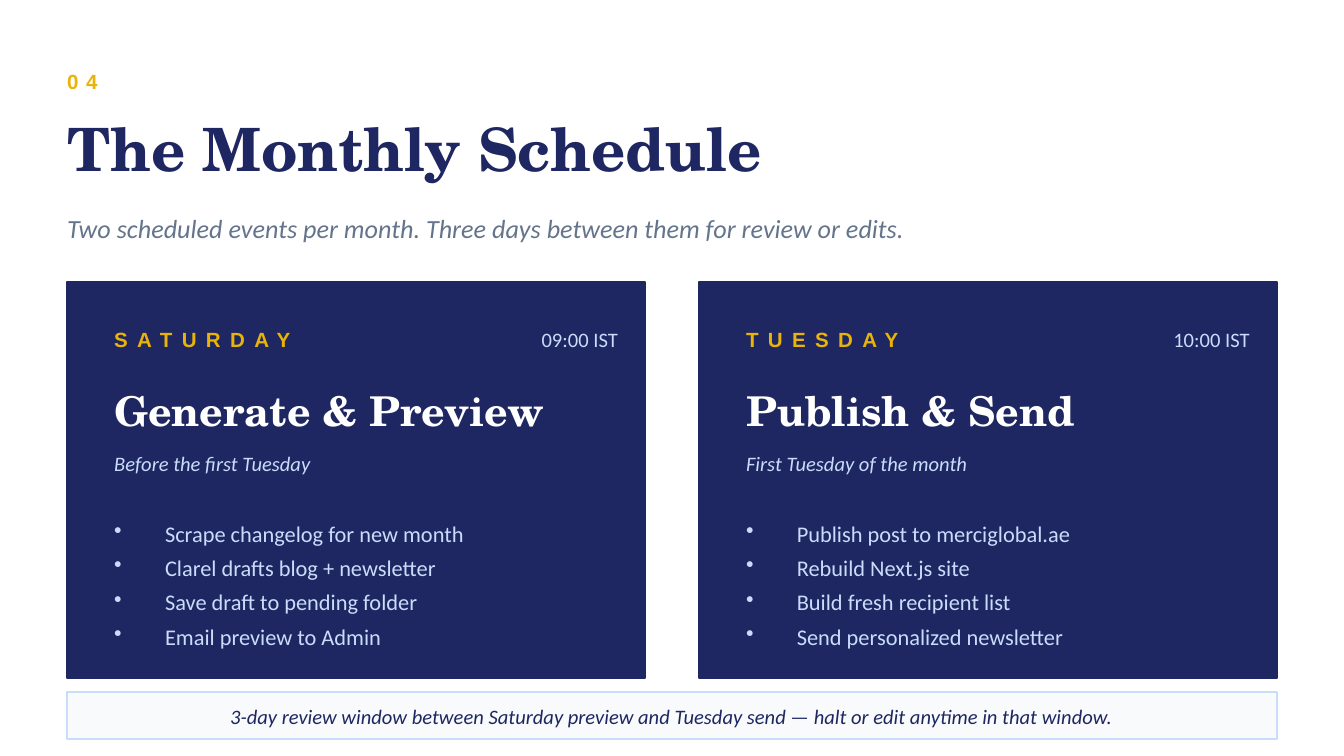
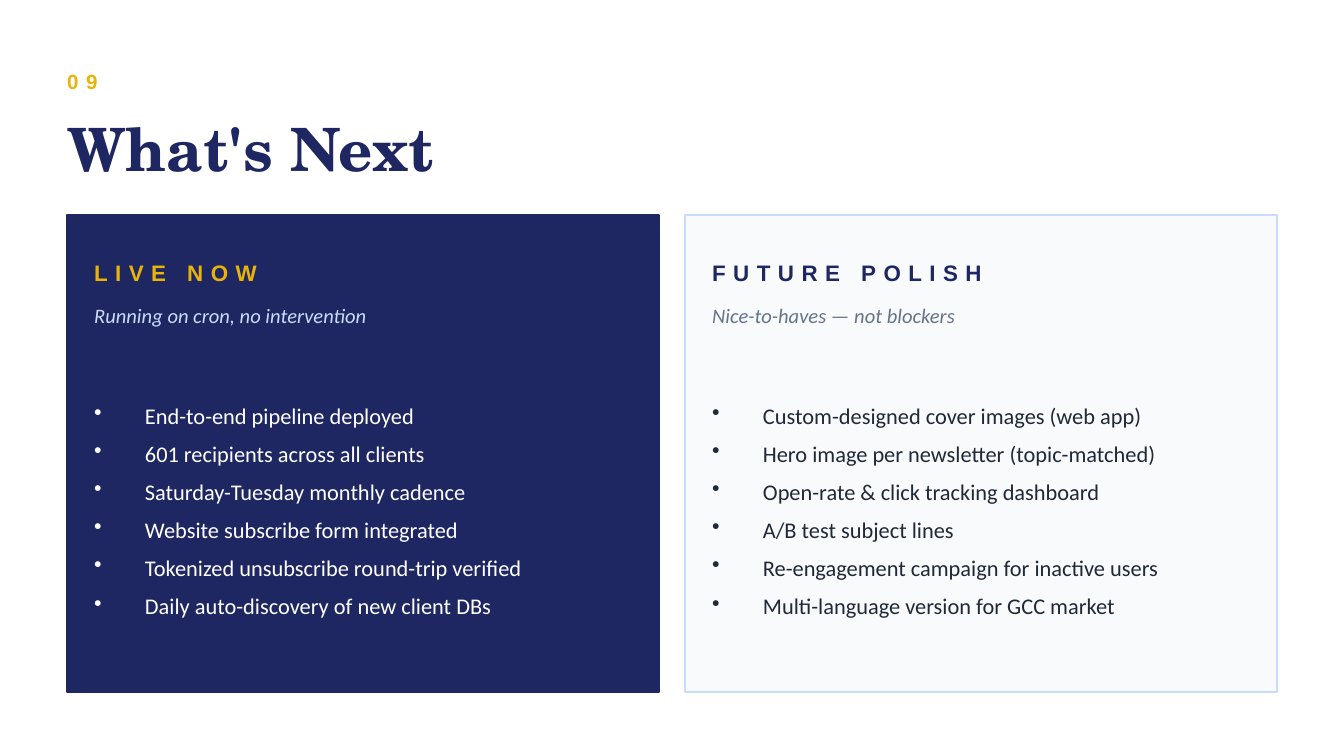
from dataclasses import dataclass

from lxml import etree
from pptx import Presentation
from pptx.dml.color import RGBColor
from pptx.enum.shapes import MSO_SHAPE
from pptx.enum.text import MSO_ANCHOR, PP_ALIGN
from pptx.oxml.ns import qn
from pptx.util import Cm, Pt

RECTANGLE = MSO_SHAPE.RECTANGLE
MIDDLE = MSO_ANCHOR.MIDDLE
LEFT, CENTER, RIGHT = PP_ALIGN.LEFT, PP_ALIGN.CENTER, PP_ALIGN.RIGHT


@dataclass(frozen=True)
class Theme:
    navy: str = "1E2761"
    gold: str = "EAB308"
    ice: str = "CADCFC"
    pale: str = "F8FAFC"
    slate: str = "64748B"
    ink: str = "1F2937"
    white: str = "FFFFFF"
    label_font: str = "Arial"
    title_font: str = "TeX Gyre Schola"
    body_font: str = "Calibri"
    title_size: int = 32
    card_title_size: int = 22
    subtitle_size: int = 14
    body_size: int = 12
    small_size: int = 11


theme = Theme()

# Lengths in centimetres
MARGIN = 1.27
CONTENT_WIDTH = 22.86
BULLET_INDENT = 0.96


def add_text(slide, box, lines, size, color, font=theme.body_font, bold=False,
             italic=False, spacing=0, align=LEFT, bullet_gap=None):
    """Place lines in a box of centimetres; bullet_gap (points) makes them a list."""
    frame = slide.shapes.add_textbox(*map(Cm, box)).text_frame
    frame.word_wrap = True
    frame.vertical_anchor = MIDDLE
    frame.margin_left = frame.margin_right = frame.margin_top = frame.margin_bottom = 0
    for index, line in enumerate(lines):
        paragraph = frame.paragraphs[0] if index == 0 else frame.add_paragraph()
        paragraph.alignment = align
        if bullet_gap is not None:
            properties = paragraph._p.get_or_add_pPr()
            properties.set("marL", str(Cm(BULLET_INDENT)))
            properties.set("indent", str(-Cm(BULLET_INDENT)))
            etree.SubElement(properties, qn("a:buChar")).set("char", "•")
            paragraph.space_after = Pt(bullet_gap)
        run = paragraph.add_run()
        run.text = line
        run.font.name = font
        run.font.size = Pt(size)
        run.font.bold = bold
        run.font.italic = italic
        run.font.color.rgb = RGBColor.from_string(color)
        if spacing:
            run._r.get_or_add_rPr().set("spc", str(spacing * 100))


def add_panel(slide, box, fill, line):
    panel = slide.shapes.add_shape(RECTANGLE, *map(Cm, box))
    panel.shadow.inherit = False
    panel.fill.solid()
    panel.fill.fore_color.rgb = RGBColor.from_string(fill)
    panel.line.color.rgb = RGBColor.from_string(line)
    panel.line.width = Pt(1)


deck = Presentation()
deck.slide_width, deck.slide_height = Cm(25.4), Cm(14.29)
blank_layout = deck.slide_layouts[6]

# Shared heading: section number and title
for number, title in (("04", "The Monthly Schedule"), ("09", "What's Next")):
    slide = deck.slides.add_slide(blank_layout)
    add_text(slide, (MARGIN, 1.02, 2.03, 1.02), [number], theme.small_size, theme.gold,
             theme.label_font, bold=True, spacing=4)
    add_text(slide, (MARGIN, 1.9, CONTENT_WIDTH, 1.78), [title], theme.title_size,
             theme.navy, theme.title_font, bold=True)
schedule, roadmap = deck.slides

# The Monthly Schedule
add_text(schedule, (MARGIN, 3.81, CONTENT_WIDTH, 1.02),
         ["Two scheduled events per month. Three days between them for review or edits."],
         theme.subtitle_size, theme.slate, italic=True)

events = [
    ("SATURDAY", "09:00 IST", "Generate & Preview", "Before the first Tuesday",
     ["Scrape changelog for new month", "Clarel drafts blog + newsletter",
      "Save draft to pending folder", "Email preview to Admin"]),
    ("TUESDAY", "10:00 IST", "Publish & Send", "First Tuesday of the month",
     ["Publish post to merciglobal.ae", "Rebuild Next.js site",
      "Build fresh recipient list", "Send personalized newsletter"]),
]
event_width = 10.92
event_step = CONTENT_WIDTH - event_width
for column, (day, time, name, timing, tasks) in enumerate(events):
    left = MARGIN + column * event_step
    text_left, text_width = left + 0.89, 9.14
    add_panel(schedule, (left, 5.33, event_width, 7.49), theme.navy, theme.navy)
    add_text(schedule, (text_left, 5.97, 6.35, 0.89), [day], theme.small_size,
             theme.gold, theme.label_font, bold=True, spacing=5)
    add_text(schedule, (left + 7.11, 5.97, 3.3, 0.89), [time], theme.small_size,
             theme.ice, align=RIGHT)
    add_text(schedule, (text_left, 7.11, text_width, 1.27), [name],
             theme.card_title_size, theme.white, theme.title_font, bold=True)
    add_text(schedule, (text_left, 8.38, text_width, 0.76), [timing],
             theme.small_size, theme.ice, italic=True)
    add_text(schedule, (text_left, 9.4, text_width, 3.3), tasks, theme.body_size,
             theme.ice, bullet_gap=4)

add_panel(schedule, (MARGIN, 13.08, CONTENT_WIDTH, 0.89), theme.pale, theme.ice)
add_text(schedule, (MARGIN + 0.25, 13.13, CONTENT_WIDTH - 0.5, 0.81),
         ["3-day review window between Saturday preview and Tuesday send"
          " — halt or edit anytime in that window."],
         theme.small_size, theme.navy, italic=True, align=CENTER)

# What's Next
stages = [
    ("LIVE NOW", "Running on cron, no intervention",
     ["End-to-end pipeline deployed", "601 recipients across all clients",
      "Saturday-Tuesday monthly cadence", "Website subscribe form integrated",
      "Tokenized unsubscribe round-trip verified",
      "Daily auto-discovery of new client DBs"],
     (theme.navy, theme.navy), (theme.gold, theme.ice, theme.white)),
    ("FUTURE POLISH", "Nice-to-haves — not blockers",
     ["Custom-designed cover images (web app)",
      "Hero image per newsletter (topic-matched)",
      "Open-rate & click tracking dashboard", "A/B test subject lines",
      "Re-engagement campaign for inactive users",
      "Multi-language version for GCC market"],
     (theme.pale, theme.ice), (theme.navy, theme.slate, theme.ink)),
]
stage_width = 11.18
stage_step = CONTENT_WIDTH - stage_width
for column, (stage, summary, items, panel_colors, text_colors) in enumerate(stages):
    left = MARGIN + column * stage_step
    text_left, text_width = left + 0.51, 10.16
    stage_color, summary_color, item_color = text_colors
    add_panel(roadmap, (left, 4.06, stage_width, 9.02), *panel_colors)
    add_text(roadmap, (text_left, 4.7, text_width, 0.89), [stage], theme.body_size,
             stage_color, theme.label_font, bold=True, spacing=4)
    add_text(roadmap, (text_left, 5.59, text_width, 0.76), [summary],
             theme.small_size, summary_color, italic=True)
    add_text(roadmap, (text_left, 6.6, text_width, 6.1), items, theme.body_size,
             item_color, bullet_gap=6)

deck.save("out.pptx")
